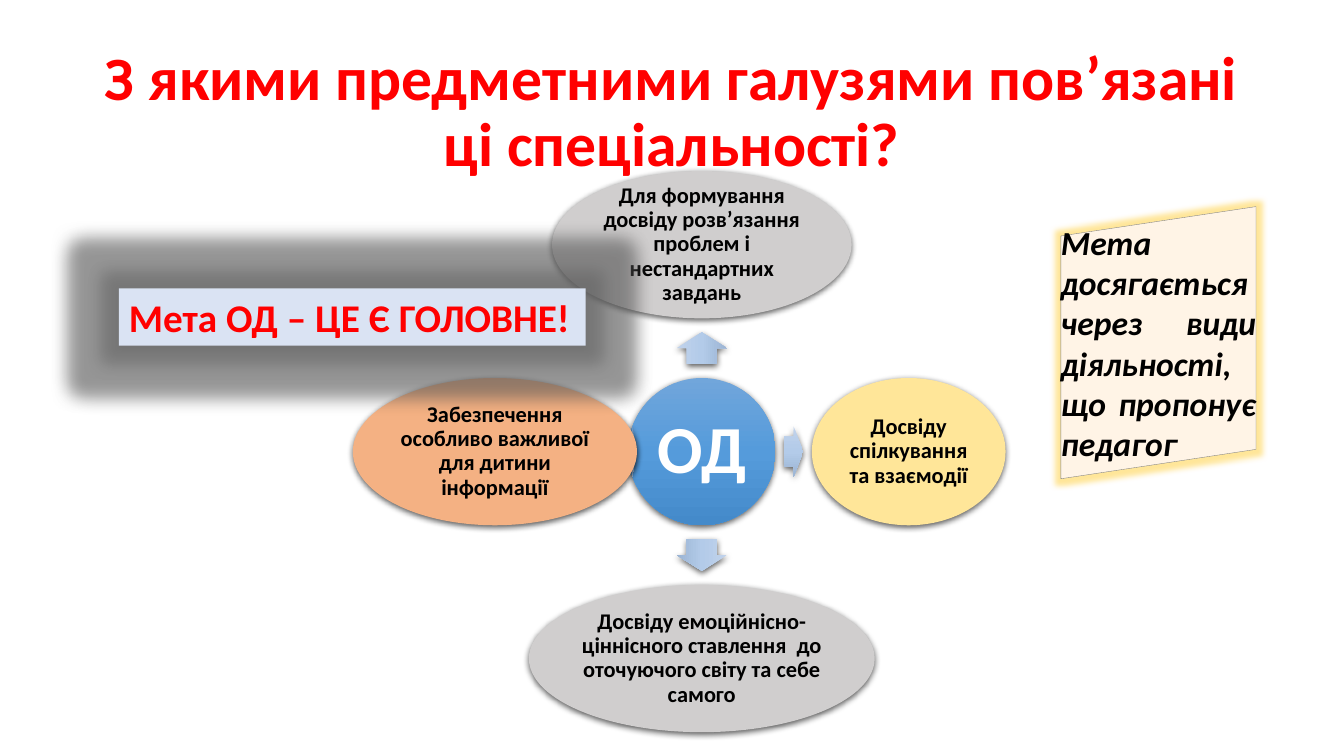
from dataclasses import dataclass

from pptx import Presentation
from pptx.dml.color import RGBColor
from pptx.enum.shapes import MSO_SHAPE
from pptx.enum.text import MSO_ANCHOR, PP_ALIGN
from pptx.oxml import parse_xml
from pptx.oxml.ns import nsdecls, qn
from pptx.util import Pt

ELLIPSE, ARROW, RECTANGLE = MSO_SHAPE.OVAL, MSO_SHAPE.RIGHT_ARROW, MSO_SHAPE.RECTANGLE
MIDDLE = MSO_ANCHOR.MIDDLE
LEFT, CENTER, JUSTIFY = PP_ALIGN.LEFT, PP_ALIGN.CENTER, PP_ALIGN.JUSTIFY


@dataclass(frozen=True)
class Theme:
    """Colours and type sizes of the slide."""
    font: str = "Calibri"
    red: str = "FF0000"
    black: str = "000000"
    white: str = "FFFFFF"
    grey: str = "D0CECE"
    yellow: str = "FFE699"
    orange: str = "F4B183"
    banner: str = "DAE3F3"
    banner_glow: str = "666666"
    note: str = "FFF4E6"
    note_line: str = "7F7F7F"
    hub: tuple = ("71A6DB", "559BDB", "448ACA")
    arrow: tuple = ("C0D2EB", "B3CBE9", "9BB4D3")
    title_size: int = 44
    hub_size: int = 48
    banner_size: int = 28
    note_size: int = 24
    label_size: int = 16


THEME = Theme()


def write_text(shape, text, size, color, align=CENTER, italic=False,
               spacing=0.9, insets=(1.3, 1.3), wrap=True):
    """Fill a shape with one bold paragraph."""
    frame = shape.text_frame
    frame.word_wrap = wrap
    frame.vertical_anchor = MIDDLE
    frame.margin_left = frame.margin_right = Pt(insets[0])
    frame.margin_top = frame.margin_bottom = Pt(insets[1])
    para = frame.paragraphs[0]
    para.alignment = align
    para.line_spacing = spacing
    span = para.add_run()
    span.text = text
    span.font.name = THEME.font
    span.font.size = Pt(size)
    span.font.bold = True
    span.font.italic = italic
    span.font.color.rgb = RGBColor.from_string(color)


def paint(shape, fill):
    """Give a shape a solid colour or a vertical gradient, and no line."""
    shape.shadow.inherit = False
    shape.line.fill.background()
    if isinstance(fill, str):
        shape.fill.solid()
        shape.fill.fore_color.rgb = RGBColor.from_string(fill)
        return
    stops = "".join(f'<a:gs pos="{index * 50000}"><a:srgbClr val="{color}"/></a:gs>'
                    for index, color in enumerate(fill))
    gradient = parse_xml(f'<a:gradFill {nsdecls("a")} rotWithShape="1"><a:gsLst>{stops}</a:gsLst>'
                         '<a:lin ang="5400000" scaled="0"/></a:gradFill>')
    shape.element.spPr.find(qn("a:prstGeom")).addnext(gradient)


def add_effect(shape, kind, color, alpha, attributes):
    """Append a glow or shadow to the effects of a painted shape."""
    effect = parse_xml(f'<a:{kind} {nsdecls("a")} {attributes}><a:srgbClr val="{color}">'
                       f'<a:alpha val="{alpha * 1000}"/></a:srgbClr></a:{kind}>')
    shape.element.spPr.find(qn("a:effectLst")).append(effect)


def add_shadow(shape, alpha=63, blur=4.5, distance=1.5):
    """Drop a soft black shadow straight down."""
    add_effect(shape, "outerShdw", THEME.black, alpha,
               f'blurRad="{Pt(blur)}" dist="{Pt(distance)}" dir="5400000" '
               'algn="ctr" rotWithShape="0"')


def add_centred(page, preset, center_x, center_y, width, height, fill):
    """Place a shadowed preset shape around a centre point."""
    shape = page.shapes.add_shape(preset, Pt(center_x - width / 2), Pt(center_y - height / 2),
                                  Pt(width), Pt(height))
    paint(shape, fill)
    add_shadow(shape)
    return shape


def add_title(page, left, top, width, height):
    """Place the slide heading."""
    box = page.shapes.add_textbox(Pt(left), Pt(top), Pt(width), Pt(height))
    write_text(box, "З якими предметними галузями пов’язані ці спеціальності?",
               THEME.title_size, THEME.red, insets=(7.2, 3.6))


def add_radial(page, center_x, center_y, orbit, diameter):
    """Draw the hub with four satellites and the arrows towards them."""
    hub = add_centred(page, ELLIPSE, center_x, center_y, diameter, diameter, THEME.hub)
    write_text(hub, "ОД", THEME.hub_size, THEME.white, wrap=False)
    satellites = [
        (0, -1, 270, 214, THEME.grey,
         "Для формування досвіду розв’язання проблем і нестандартних завдань"),
        (1, 0, 0, 138.4, THEME.yellow, "Досвіду спілкування та взаємодії"),
        (0, 1, 90, 247, THEME.grey,
         "Досвіду емоційнісно-ціннісного ставлення  до оточуючого світу та себе самого"),
        (-1, 0, 0, 203, THEME.orange,
         "Забезпечення особливо важливої для дитини інформації"),
    ]
    for step_x, step_y, rotation, width, fill, text in satellites:
        reach = width if step_x else diameter
        gap = orbit - (diameter + reach) / 2
        middle = diameter / 2 + gap / 2
        arrow = add_centred(page, ARROW, center_x + step_x * middle, center_y + step_y * middle,
                            abs(gap) * 0.53, 36, THEME.arrow)
        arrow.adjustments[0] = 0.6
        arrow.adjustments[1] = 0.5
        arrow.rotation = rotation
        satellite = add_centred(page, ELLIPSE, center_x + step_x * orbit,
                                center_y + step_y * orbit, width, diameter, fill)
        write_text(satellite, text, THEME.label_size, THEME.black)


def add_banner(page, left, top, width, height):
    """Place the glowing banner with the main statement."""
    banner = page.shapes.add_shape(RECTANGLE, Pt(left), Pt(top), Pt(width), Pt(height))
    paint(banner, THEME.banner)
    add_effect(banner, "glow", THEME.banner_glow, 55, f'rad="{Pt(25)}"')
    add_shadow(banner, 32, 3.5, 2.2)
    write_text(banner, "Мета ОД – ЦЕ Є ГОЛОВНЕ!", THEME.banner_size, THEME.red,
               align=LEFT, spacing=1.0, insets=(7.2, 3.6), wrap=False)


def add_note(page, left, top, width, height, slant):
    """Place the slanted note with its yellow glow."""
    builder = page.shapes.build_freeform(Pt(left), Pt(top + slant))
    builder.add_line_segments([(Pt(left + width), Pt(top)),
                               (Pt(left + width), Pt(top + height - slant)),
                               (Pt(left), Pt(top + height))])
    note = builder.convert_to_shape()
    paint(note, THEME.note)
    note.line.color.rgb = RGBColor.from_string(THEME.note_line)
    note.line.width = Pt(0.25)
    add_effect(note, "glow", THEME.yellow, 100, f'rad="{Pt(8)}"')
    write_text(note, "Мета досягається через види діяльності, що пропонує педагог ",
               THEME.note_size, THEME.black, align=JUSTIFY, italic=True,
               spacing=1.0, insets=(0, 0))


def main():
    """Build the slide and save it."""
    deck = Presentation()
    deck.slide_width, deck.slide_height = Pt(960), Pt(540)
    page = deck.slides.add_slide(deck.slide_layouts[6])
    add_title(page, 66, 28.8, 828, 104.4)
    add_radial(page, 501.3, 322.6, 147.8, 105.2)
    add_banner(page, 85, 206, 333.4, 41)
    add_note(page, 757.8, 147.6, 139.4, 194.4, 21)
    deck.save("out.pptx")


if __name__ == "__main__":
    main()
